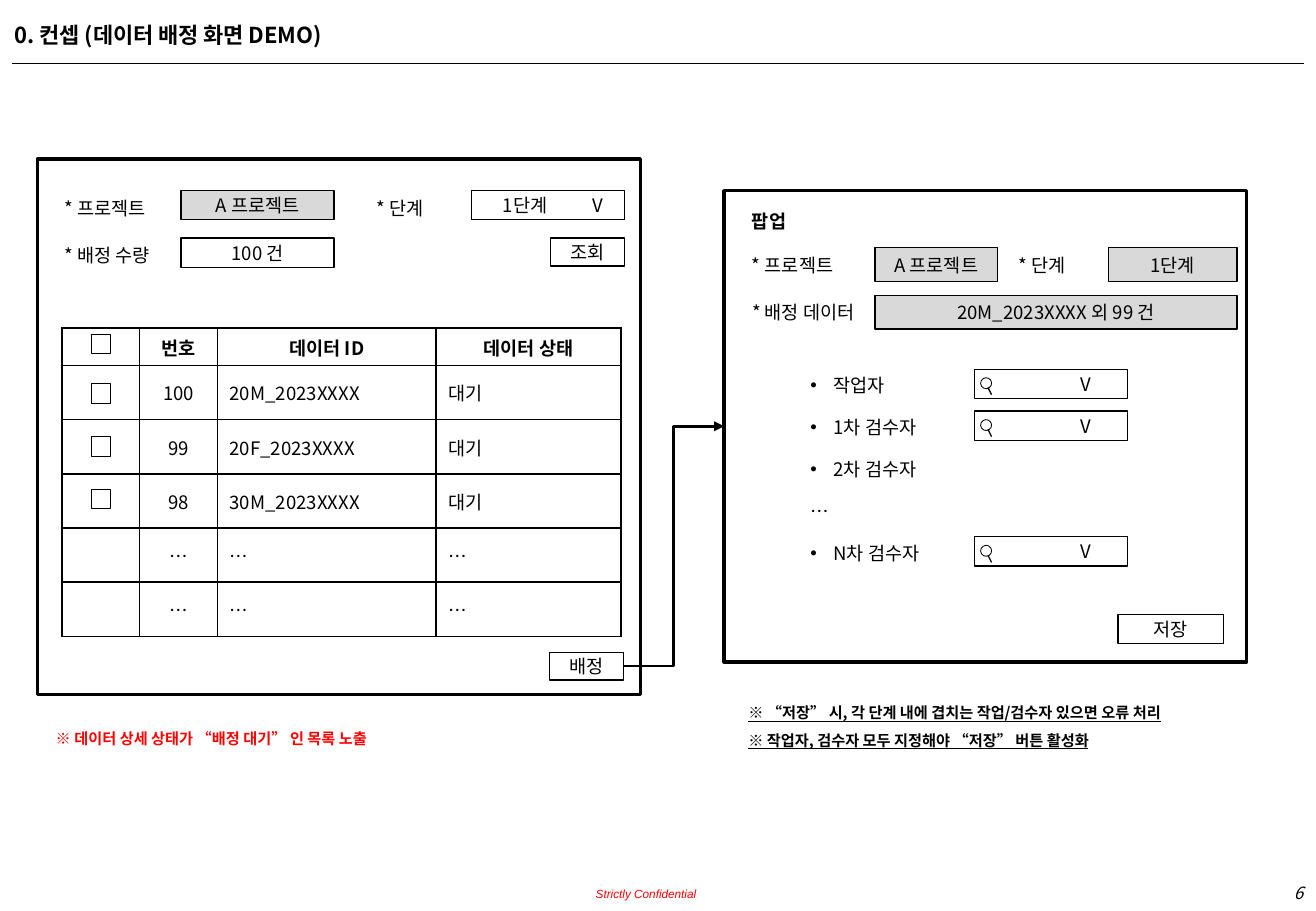
from lxml import etree
from pptx import Presentation
from pptx.dml.color import RGBColor
from pptx.enum import shapes as kinds, text as styles
from pptx.oxml import ns
from pptx.util import Inches, Pt

FONT = "Noto Sans CJK KR"
COLORS = {"ink": "000000", "alert": "FF0000", "locked": "D9D9D9"}
LEFT, CENTER, RIGHT = styles.PP_ALIGN.LEFT, styles.PP_ALIGN.CENTER, styles.PP_ALIGN.RIGHT
RECT = kinds.MSO_SHAPE.RECTANGLE

TITLE = "0. 컨셉 (데이터 배정 화면 DEMO)"
CONFIDENTIAL, PAGE = "Strictly Confidential", "6"

# Columns and rows shared by the parts of each panel
LABEL, FIELD, FIELD_W, FIELD_H = 0.43, 1.49, 1.26, 0.24
FILTER_ROWS = [1.57, 1.96]
POPUP_LABEL, POPUP_FIELD, POPUP_H = 6.09, 7.2, 0.28
POPUP_ROWS = [2.04, 2.43]
PANELS = {"list": (0.31, 1.31, 4.96, 4.41), "popup": (5.96, 1.57, 4.3, 3.88)}

# text, left, top, width, alignment, bold
LABELS = [
    ("* 프로젝트", LABEL, FILTER_ROWS[0], 0.94, LEFT, False),
    ("* 단계", 2.82, FILTER_ROWS[0], 0.94, CENTER, False),
    ("* 배정 수량", LABEL, FILTER_ROWS[1], 1.06, LEFT, False),
    ("팝업", POPUP_LABEL, 1.68, 0.94, LEFT, True),
    ("* 프로젝트", POPUP_LABEL, POPUP_ROWS[0], 0.94, LEFT, False),
    ("* 단계", 8.14, POPUP_ROWS[0], 0.87, CENTER, False),
    ("* 배정 데이터", POPUP_LABEL, POPUP_ROWS[1], 1.21, LEFT, False),
]
# text, left, top, width, height, fill
FIELDS = [
    ("A 프로젝트", FIELD, FILTER_ROWS[0], FIELD_W, FIELD_H, "locked"),
    ("100 건", FIELD, FILTER_ROWS[1], FIELD_W, FIELD_H, None),
    ("조회", 4.53, FILTER_ROWS[1], 0.61, 0.23, None),
    ("A 프로젝트", POPUP_FIELD, POPUP_ROWS[0], 1.01, POPUP_H, "locked"),
    ("1단계", 9.12, POPUP_ROWS[0], 1.06, POPUP_H, "locked"),
    ("20M_2023XXXX 외 99 건", POPUP_FIELD, POPUP_ROWS[1], 2.98, POPUP_H, "locked"),
    ("저장", 9.2, 5.06, 0.87, FIELD_H, None),
]
ASSIGN = ("배정", 4.52, 5.37, 0.61, 0.23)

DATA = [
    ("", "번호", "데이터 ID", "데이터 상태"),
    ("", "100", "20M_2023XXXX", "대기"),
    ("", "99", "20F_2023XXXX", "대기"),
    ("", "98", "30M_2023XXXX", "대기"),
    ("", "…", "…", "…"),
    ("", "…", "…", "…"),
]
DATA_AT, DATA_COLS = (0.51, 2.7, 4.6, 2.54), [0.64, 0.64, 1.8, 1.52]
HEADER_H = 0.31
CHECKBOX_LEFT, CHECKBOX = 0.75, 0.16
CHECKBOX_TOPS = [2.75] + [3.16 + 0.435 * i for i in range(3)]

# role, has a bullet, has a search field
ROLES = [("작업자", True, True), ("1차 검수자", True, True), ("2차 검수자", True, False),
         ("…", False, False), ("N차 검수자", True, True)]
ROLE_LEFT, ROLE_TOP, ROLE_STEP, SEARCH_LEFT = 6.57, 3.03, 0.345, 8.02

POPUP_NOTES = ["※ “저장” 시, 각 단계 내에 겹치는 작업/검수자 있으면 오류 처리",
               "※ 작업자, 검수자 모두 지정해야 “저장” 버튼 활성화"]
LIST_NOTES = ["※ 데이터 상세 상태가 “배정 대기” 인 목록 노출"]

prs = Presentation()
prs.slide_width, prs.slide_height = Inches(10.83), Inches(7.5)
slide = prs.slides.add_slide(prs.slide_layouts[5])


def rgb(color):
    return RGBColor.from_string(COLORS[color])


def add_xml(parent, tag, **attributes):
    return etree.SubElement(parent, ns.qn(tag), attributes)


def write(frame, lines, size=11, align=LEFT, color="ink", font=FONT, spacing=None, **flags):
    frame.text = "\n".join(lines)
    for paragraph in frame.paragraphs:
        paragraph.alignment = align
        if spacing:
            paragraph.line_spacing = spacing
        for run in paragraph.runs:
            run.font.size, run.font.name = Pt(size), font
            run.font.color.rgb = rgb(color)
            for flag, value in flags.items():
                setattr(run.font, flag, value)
            add_xml(run.font._element, "a:ea", typeface=font)


def add_label(lines, left, top, width, height=0.29, wrap=True, **style):
    label = slide.shapes.add_textbox(*map(Inches, (left, top, width, height)))
    label.text_frame.word_wrap = wrap
    write(label.text_frame, lines, **style)
    return label


def add_outline(box, fill=None, weight=0.75, kind=RECT, parent=slide):
    outline = parent.shapes.add_shape(kind, *map(Inches, box))
    outline.shadow.inherit = False
    if fill:
        outline.fill.solid()
        outline.fill.fore_color.rgb = rgb(fill)
    else:
        outline.fill.background()
    outline.line.color.rgb, outline.line.width = rgb("ink"), Pt(weight)
    return outline


def add_field(caption, left, top, width, height, fill=None, align=CENTER, inset=0.1):
    field = add_outline((left, top, width, height), fill)
    field.text_frame.margin_left = Inches(inset)
    field.text_frame.vertical_anchor = styles.MSO_ANCHOR.MIDDLE
    write(field.text_frame, [caption], align=align)
    return field


def add_line(kind, start, end, weight=0.75, parent=slide):
    line = parent.shapes.add_connector(kind, *map(Inches, start + end))
    line.line.color.rgb, line.line.width = rgb("ink"), Pt(weight)
    add_xml(line._element.spPr, "a:effectLst")
    return line


def add_search(top):
    add_field("V", SEARCH_LEFT, top, FIELD_W, FIELD_H, align=LEFT, inset=0.87)
    magnifier = slide.shapes.add_group_shape()
    lens = add_outline((SEARCH_LEFT + 0.05, top + 0.07, 0.09, 0.09), weight=0.5,
                       kind=kinds.MSO_SHAPE.OVAL, parent=magnifier)
    lens.rotation = 25.8
    add_line(kinds.MSO_CONNECTOR.STRAIGHT, (SEARCH_LEFT + 0.11, top + 0.15),
             (SEARCH_LEFT + 0.14, top + 0.21), parent=magnifier)


def add_borders(cell):
    properties = cell._tc.get_or_add_tcPr()
    for i, side in enumerate(("a:lnL", "a:lnR", "a:lnT", "a:lnB")):
        border = etree.Element(ns.qn(side), w=str(Pt(1)))
        add_xml(add_xml(border, "a:solidFill"), "a:srgbClr", val=COLORS["ink"])
        properties.insert(i, border)


def add_data_table():
    table = slide.shapes.add_table(len(DATA), len(DATA_COLS), *map(Inches, DATA_AT)).table
    for column, width in zip(table.columns, DATA_COLS):
        column.width = Inches(width)
    body_height = (DATA_AT[3] - HEADER_H) / (len(DATA) - 1)
    for r, values in enumerate(DATA):
        table.rows[r].height = Inches(body_height if r else HEADER_H)
        for c, value in enumerate(values):
            cell = table.cell(r, c)
            cell.fill.background()
            cell.vertical_anchor = styles.MSO_ANCHOR.MIDDLE
            write(cell.text_frame, [value], align=CENTER if r == 0 or c < 2 else LEFT, bold=r == 0)
            if not value:
                add_xml(cell.text_frame.paragraphs[0]._p, "a:endParaRPr", sz="1100")
            add_borders(cell)


title = slide.shapes.title
title.left, title.top, title.width, title.height = map(Inches, (0.02, 0.13, 10.52, 0.32))
write(title.text_frame, [TITLE], size=13, bold=True)
title.text_frame.auto_size = styles.MSO_AUTO_SIZE.NONE
add_line(kinds.MSO_CONNECTOR.STRAIGHT, (0.1, 0.52), (10.73, 0.52))

panels = {name: add_outline(box, weight=2) for name, box in PANELS.items()}
for caption, left, top, width, align, bold in LABELS:
    add_label([caption], left, top, width, align=align, bold=bold)
for field in FIELDS:
    add_field(*field)

stage = add_field("1단계\tV", 3.88, FILTER_ROWS[0], FIELD_W, FIELD_H, align=LEFT, inset=0.26)
tabs = add_xml(stage.text_frame.paragraphs[0]._p.get_or_add_pPr(), "a:tabLst")
add_xml(tabs, "a:tab", pos=str(Inches(0.74)), algn="l")

add_data_table()
for top in CHECKBOX_TOPS:
    add_outline((CHECKBOX_LEFT, top, CHECKBOX, CHECKBOX), weight=0.5)

for i, (role, bulleted, searchable) in enumerate(ROLES):
    top = ROLE_TOP + i * ROLE_STEP
    label = add_label([role], ROLE_LEFT, top, 1.21)
    if bulleted:
        properties = label.text_frame.paragraphs[0]._p.get_or_add_pPr()
        properties.set("marL", str(Inches(0.19)))
        properties.set("indent", str(-Inches(0.19)))
        add_xml(properties, "a:buFont", typeface="Arial")
        add_xml(properties, "a:buChar", char="•")
    if searchable:
        add_search(top + 0.01)

add_label(POPUP_NOTES, 6.06, 5.67, 3.85, 0.53, wrap=False, size=9, spacing=1.5, bold=True, underline=True)
add_label(LIST_NOTES, 0.36, 5.88, 2.92, 0.3, wrap=False, size=9, spacing=1.5, color="alert", bold=True)

assign = add_field(*ASSIGN)
opens = add_line(kinds.MSO_CONNECTOR.ELBOW, (5.13, 5.48), (5.96, 3.51), weight=1.5)
opens.begin_connect(assign, 3)
opens.end_connect(panels["popup"], 1)
add_xml(opens.line._get_or_add_ln(), "a:tailEnd", type="triangle")

footer = add_label([CONFIDENTIAL], 4.2, 7.18, 1.53, 0.24, size=7, align=RIGHT,
                   color="alert", font="Arial", italic=True).text_frame
footer.margin_left = footer.margin_right = footer.margin_top = footer.margin_bottom = 0
footer.vertical_anchor = styles.MSO_ANCHOR.BOTTOM
add_label([PAGE], 9.15, 7.22, 1.67, 0.27, size=10, align=RIGHT, italic=True)

prs.save("out.pptx")
